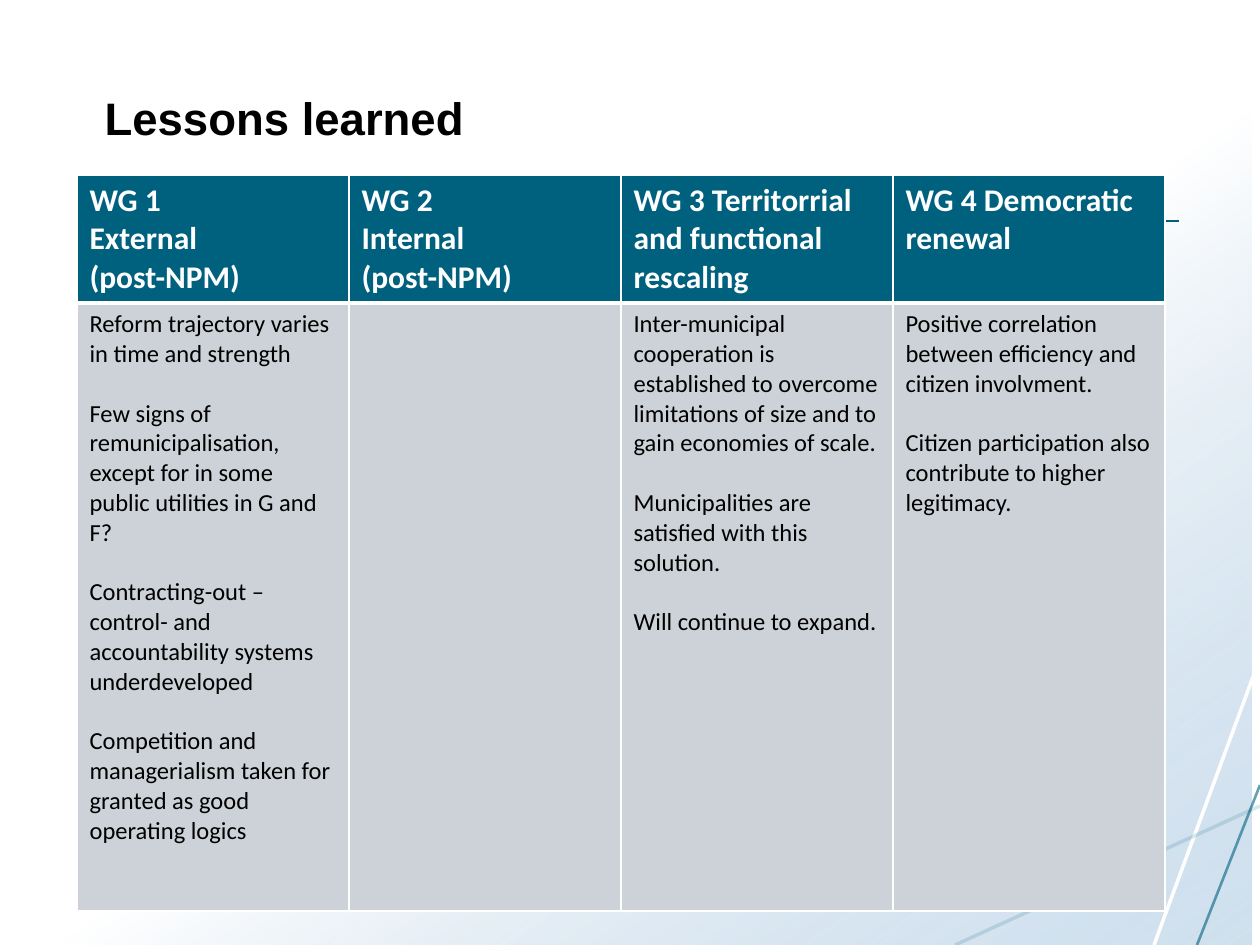
"""Build the 'Lessons learned' slide: a four-column working-group table on a soft gradient."""
from dataclasses import dataclass
from typing import NamedTuple

from lxml.etree import SubElement
from pptx import Presentation
from pptx.dml.color import RGBColor
from pptx.enum.shapes import MSO_CONNECTOR as Connector, MSO_SHAPE as Shape
from pptx.enum.text import MSO_ANCHOR as Anchor, PP_ALIGN as Align
from pptx.oxml import parse_xml
from pptx.oxml.ns import nsdecls, qn
from pptx.util import Emu, Pt


@dataclass(frozen=True)
class Theme:
    white: str = "FFFFFF"
    black: str = "000000"
    teal: str = "00617F"
    light_teal: str = "15718F"
    sky: str = "A9C7E0"
    cell: str = "CCD2D8"
    title_font: str = "Arial"
    table_font: str = "Calibri"
    title_size: int = 26
    head_size: int = 18
    body_size: int = 14
    body_gap: int = 17


class Stroke(NamedTuple):
    start: tuple[int, int]
    end: tuple[int, int]
    color: str
    width: float
    opacity: int = 100


class Group(NamedTuple):
    heading: list[str]
    lessons: list[str]


THEME = Theme()
PX_PER_INCH = 126

STROKES = [
    Stroke((1260, 658), (1154, 945), THEME.white, 2),
    Stroke((1260, 806), (955, 945), THEME.light_teal, 2, 16),
    Stroke((1260, 785), (1197, 945), THEME.teal, 1.5, 60),
    Stroke((106, 220), (1179, 221), THEME.teal, 1),
]

GROUPS = [
    Group(["WG 1", "External", "(post-NPM)"], [
        "Reform trajectory varies in time and strength",
        "Few signs of remunicipalisation, except for in some public utilities in G and F?",
        "Contracting-out – control- and accountability systems underdeveloped",
        "Competition and managerialism taken for granted as good operating logics",
    ]),
    Group(["WG 2", "Internal", "(post-NPM)"], []),
    Group(["WG 3 Territorrial and functional rescaling"], [
        "Inter-municipal cooperation is established to overcome limitations of size "
        "and to gain economies of scale.",
        "Municipalities are satisfied with this solution.",
        "Will continue to expand.",
    ]),
    Group(["WG 4 Democratic renewal"], [
        "Positive correlation between efficiency and citizen involvment.",
        "Citizen participation also contribute to higher legitimacy.",
    ]),
]


def px(length: int) -> Emu:
    """Turn pixels into EMU."""
    return Emu(round(length * 914400 / PX_PER_INCH))


def rgb(color: str) -> RGBColor:
    """Turn a hex string into a colour."""
    return RGBColor.from_string(color)


def draw_backdrop(page) -> None:
    """Draw the diagonal white-to-blue gradient panel."""
    panel = page.shapes.add_shape(Shape.RECTANGLE, px(-9), 0, px(1260), px(945))
    panel.shadow.inherit = False
    panel.line.fill.background()
    gradient = parse_xml(
        f'<a:gradFill {nsdecls("a")} rotWithShape="1"><a:gsLst>'
        f'<a:gs pos="54000"><a:srgbClr val="{THEME.white}"/></a:gs>'
        f'<a:gs pos="100000"><a:srgbClr val="{THEME.sky}"><a:alpha val="54000"/></a:srgbClr></a:gs>'
        f'</a:gsLst><a:lin ang="{55 * 60000}" scaled="0"/></a:gradFill>'
    )
    panel.element.spPr.find(qn("a:prstGeom")).addnext(gradient)


def draw_stroke(page, stroke: Stroke) -> None:
    """Draw one straight decorative line."""
    line = page.shapes.add_connector(
        Connector.STRAIGHT, *map(px, stroke.start), *map(px, stroke.end))
    line.line.color.rgb = rgb(stroke.color)
    line.line.width = Pt(stroke.width)
    properties = line._element.spPr
    if stroke.opacity < 100:
        color = properties.find(".//" + qn("a:srgbClr"))
        SubElement(color, qn("a:alpha")).set("val", str(stroke.opacity * 1000))
    SubElement(properties, qn("a:effectLst"))


def write_title(page, text: str) -> None:
    """Place the title above the backdrop and format it."""
    title = page.shapes.title
    page.shapes._spTree.append(title._element)
    title.left, title.top, title.width, title.height = px(92), px(42), px(1086), px(107)
    frame = title.text_frame
    frame.text = text
    frame.vertical_anchor = Anchor.BOTTOM
    frame.margin_bottom = px(4)
    para = frame.paragraphs[0]
    para.alignment = Align.LEFT
    font = para.font
    font.name, font.size, font.bold = THEME.title_font, Pt(THEME.title_size), True
    font.color.rgb = rgb(THEME.black)


def set_borders(cell, bottom: int) -> None:
    """Give a cell white borders, with its own bottom width in points."""
    properties = cell._tc.get_or_add_tcPr()
    widths = {"lnL": 1, "lnR": 1, "lnT": 1, "lnB": bottom}
    for index, (side, width) in enumerate(widths.items()):
        properties.insert(index, parse_xml(
            f'<a:{side} {nsdecls("a")} w="{Pt(width)}"><a:solidFill>'
            f'<a:srgbClr val="{THEME.white}"/></a:solidFill></a:{side}>'))


def fill_cell(cell, lines: list[str], is_head: bool) -> None:
    """Write and format a heading cell or a lessons cell."""
    cell.fill.solid()
    cell.fill.fore_color.rgb = rgb(THEME.teal if is_head else THEME.cell)
    set_borders(cell, 3 if is_head else 1)
    frame = cell.text_frame
    for index, line in enumerate(lines):
        para = frame.paragraphs[0] if index == 0 else frame.add_paragraph()
        para.text = line
        if index and not is_head:
            para.space_before = Pt(THEME.body_gap)
        font = para.font
        font.name, font.bold = THEME.table_font, is_head
        font.size = Pt(THEME.head_size if is_head else THEME.body_size)
        font.color.rgb = rgb(THEME.white if is_head else THEME.black)


def draw_table(page, groups: list[Group]) -> None:
    """Draw one column for each working group."""
    head, body, column = 128, 608, 272
    table = page.shapes.add_table(
        2, len(groups), px(77), px(175), px(column * len(groups)), px(head + body)).table
    table.rows[0].height, table.rows[1].height = px(head), px(body)
    for index, group in enumerate(groups):
        table.columns[index].width = px(column)
        fill_cell(table.cell(0, index), group.heading, True)
        fill_cell(table.cell(1, index), group.lessons, False)


def main() -> None:
    """Build and save the deck."""
    deck = Presentation()
    deck.slide_width, deck.slide_height = px(1260), px(945)
    page = deck.slides.add_slide(deck.slide_layouts[5])
    draw_backdrop(page)
    for stroke in STROKES:
        draw_stroke(page, stroke)
    write_title(page, "Lessons learned")
    draw_table(page, GROUPS)
    deck.save("out.pptx")


if __name__ == "__main__":
    main()
